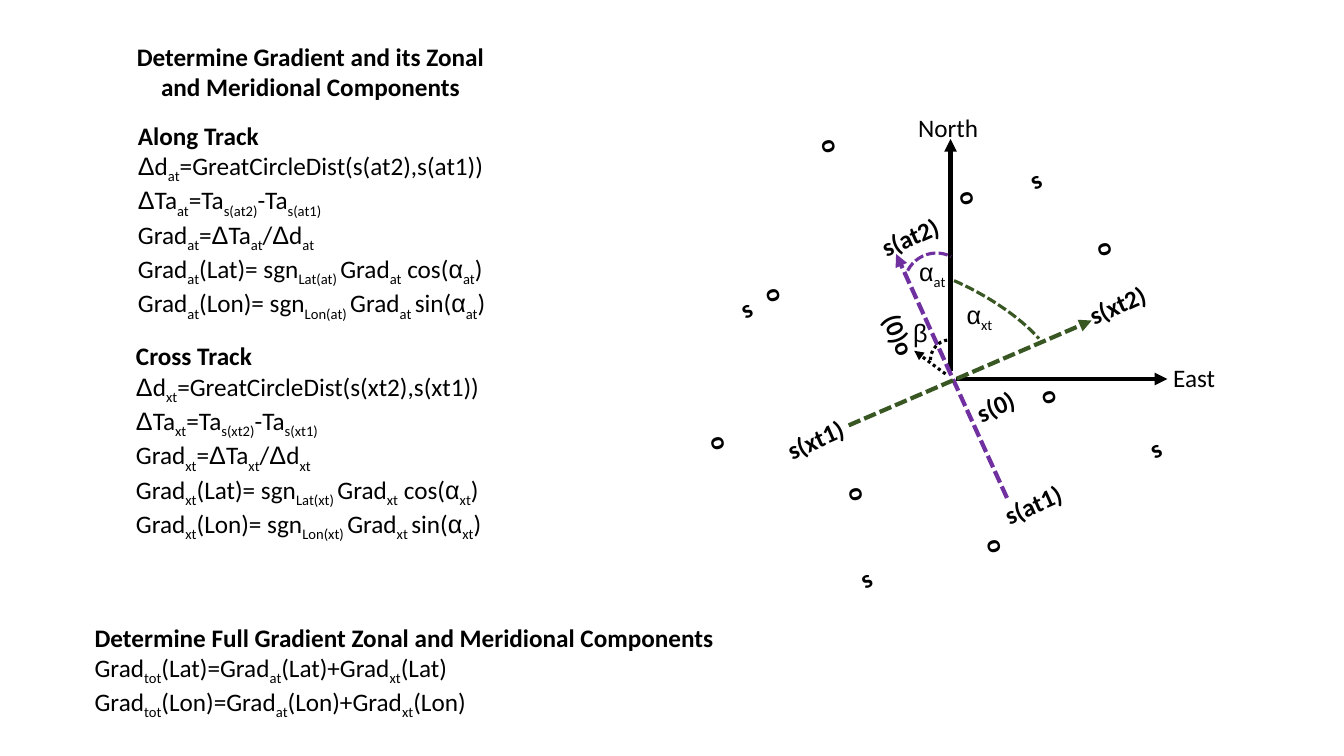
from dataclasses import dataclass
from itertools import groupby, product

from lxml.etree import SubElement
from pptx import Presentation
from pptx.dml.color import RGBColor
from pptx.enum.dml import MSO_LINE as Dash
from pptx.enum.shapes import MSO_CONNECTOR as Conn, MSO_SHAPE as Geom
from pptx.enum.text import MSO_ANCHOR as Anchor, MSO_AUTO_SIZE as Fit, PP_ALIGN as Align
from pptx.oxml.ns import qn
from pptx.util import Inches, Pt

BLACK = RGBColor(0x00, 0x00, 0x00)
PURPLE = RGBColor(0x70, 0x30, 0xA0)
GREEN = RGBColor(0x38, 0x57, 0x23)
GREEK = "Δαβ"
COLS, ROWS = 133.33, 75
CELL = Inches(0.1)
LABEL_H = 4
TRACK_TILT = 336
SCAN_TILT = 254.1


@dataclass
class Label:
    text: str
    col: float
    row: float
    cols: float
    tilt: float = 0
    bold: bool = False


@dataclass
class Ray:
    start: tuple[float, float]
    end: tuple[float, float]
    color: RGBColor = BLACK
    weight: float = 3
    dash: Dash | None = None


@dataclass
class Arc:
    col: float
    row: float
    cols: float
    rows: float
    tilt: float
    color: RGBColor
    dash: Dash
    angles: tuple[float, float] | None = None


def grid(n: float) -> int:
    return round(n * CELL)


def box(col: float, row: float, cols: float, rows: float) -> tuple[int, ...]:
    return tuple(grid(n) for n in (col, row, cols, rows))


def add_runs(p, text: str, bold: bool) -> None:
    for i, part in enumerate(text.split("~")):
        for greek, chars in groupby(part, lambda ch: ch in GREEK):
            r = p.add_run()
            r.text = "".join(chars)
            r.font.name = "Arial" if greek else "Calibri"
            r.font.size = Pt(18)
            r.font.bold = bold
            r.font.color.rgb = BLACK
            if i % 2:
                r._r.get_or_add_rPr().set("baseline", "-25000")


def add_block(s, place: tuple[int, ...], lines: list[str], bold_first: bool = True):
    sp = s.shapes.add_textbox(*place)
    tf = sp.text_frame
    tf.word_wrap = True
    for i, line in enumerate(lines):
        p = tf.add_paragraph() if i else tf.paragraphs[0]
        add_runs(p, line, bold_first and i == 0)
    return sp


def add_label(s, label: Label) -> None:
    place = box(label.col, label.row, label.cols, LABEL_H)
    add_block(s, place, [label.text], label.bold).rotation = label.tilt


def add_ray(s, ray: Ray) -> None:
    ends = [grid(n) for n in ray.start + ray.end]
    sp = s.shapes.add_connector(Conn.STRAIGHT, *ends)
    sp.line.color.rgb = ray.color
    sp.line.width = Pt(ray.weight)
    if ray.dash:
        sp.line.dash_style = ray.dash
    SubElement(sp.line._get_or_add_ln(), qn("a:tailEnd"), type="triangle")
    SubElement(sp._element.spPr, qn("a:effectLst"))


def add_arc(s, arc: Arc) -> None:
    sp = s.shapes.add_shape(Geom.ARC, *box(arc.col, arc.row, arc.cols, arc.rows))
    sp.shadow.inherit = False
    sp.fill.background()
    sp.rotation = arc.tilt
    sp.line.color.rgb = arc.color
    sp.line.width = Pt(2.25)
    sp.line.dash_style = arc.dash
    if arc.angles:
        sp.adjustments[0], sp.adjustments[1] = arc.angles


def add_title(s, text: str) -> None:
    sp = s.shapes.title
    sp.left, sp.top, sp.width, sp.height = box(12.3, 3.6, 37, 7.1)
    tf = sp.text_frame
    tf.word_wrap = True
    tf.auto_size = Fit.NONE
    tf.vertical_anchor = Anchor.TOP
    p = tf.paragraphs[0]
    p.alignment = Align.CENTER
    add_runs(p, text, True)


def track_lines(name: str, t: str) -> list[str]:
    return [
        f"{name} Track",
        f"Δd~{t}~=GreatCircleDist(s({t}2),s({t}1))",
        f"ΔTa~{t}~=Ta~s({t}2)~-Ta~s({t}1)~",
        f"Grad~{t}~=ΔTa~{t}~/Δd~{t}~",
        f"Grad~{t}~(Lat)= sgn~Lat({t}) ~Grad~{t}~ cos(α~{t}~)",
        f"Grad~{t}~(Lon)= sgn~Lon({t}) ~Grad~{t} ~sin(α~{t}~)",
    ]


def total_line(axis: str) -> str:
    return f"Grad~tot~({axis})=Grad~at~({axis})+Grad~xt~({axis})"


TRACK_POINTS = [
    ("s", 72.5, 28.6, 3.1), ("s(at2)", 86.3, 21.4, 8.3), ("s", 101.2, 15.8, 3.1),
    ("s(xt1)", 76.9, 41.3, 9.2), ("s(0)", 95.8, 38.1, 6.7), ("s(xt2)", 106.9, 28.1, 8.4),
    ("s", 84.4, 55.3, 3.1), ("s(at1)", 98.5, 47.9, 8.4), ("s", 113.1, 42.5, 3.1),
]
SCAN_POINTS = [
    Label("o", 69.3 + 13.7 * i + 5.5 * j, 42.2 + 5.1 * i - 14.7 * j, 3.1, SCAN_TILT, True)
    for i, j in product(range(3), repeat=2) if (i, j) != (1, 1)
]
LABELS = [Label(*point, TRACK_TILT, True) for point in TRACK_POINTS] + SCAN_POINTS + [
    Label("(0)o", 86.1, 31.3, 6.3, 66.9, True),
    Label("North", 90.1, 10.7, 8.1),
    Label("East", 115.4, 35.5, 6.5),
    Label("α~at~", 90.2, 24.9, 5.4),
    Label("α~xt~", 94.9, 29.2, 5.4),
    Label("β", 89.6, 31, 3.1),
]
RAYS = [
    Ray((94.3, 36.8), (94.3, 13.8)),
    Ray((94.8, 37.6), (115.8, 37.6)),
    Ray((99.9, 49.4), (88.9, 25.2), PURPLE, dash=Dash.SQUARE_DOT),
    Ray((84.2, 42.2), (108.3, 31.8), GREEN, dash=Dash.SQUARE_DOT),
    Ray((93.8, 37.1), (90.7, 34.8), weight=2.25, dash=Dash.ROUND_DOT),
]
ARCS = [
    Arc(89.7, 25.1, 6.4, 6.4, 296.9, PURPLE, Dash.SQUARE_DOT),
    Arc(86, 28.8, 19.6, 6.4, 29.6, GREEN, Dash.SQUARE_DOT, (134.95, 205.67)),
    Arc(92.3, 33.7, 4, 4, 270, BLACK, Dash.ROUND_DOT),
]


def main() -> None:
    prs = Presentation()
    prs.slide_width, prs.slide_height = grid(COLS), grid(ROWS)
    s = prs.slides.add_slide(prs.slide_layouts[5])
    add_title(s, "Determine Gradient and its Zonal and Meridional Components")
    add_block(s, box(12.7, 11.4, 39.3, 19.2), track_lines("Along", "at"))
    add_block(s, box(12.5, 33.3, 40.8, 19.2), track_lines("Cross", "xt"))
    add_block(s, box(8.4, 61.2, 64.9, 10.1), [
        "Determine Full Gradient Zonal and Meridional Components",
        total_line("Lat"),
        total_line("Lon"),
    ])
    for ray in RAYS:
        add_ray(s, ray)
    for arc in ARCS:
        add_arc(s, arc)
    for label in LABELS:
        add_label(s, label)
    prs.save("out.pptx")


if __name__ == "__main__":
    main()
